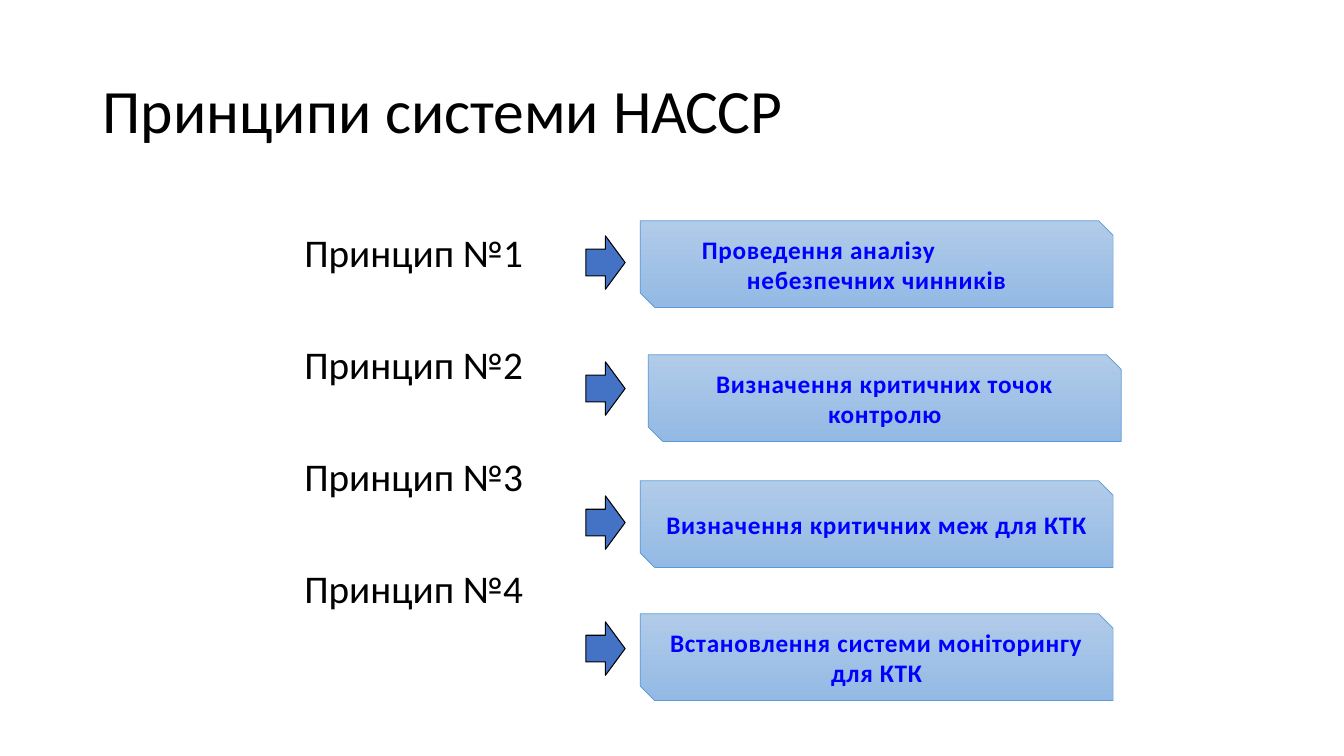
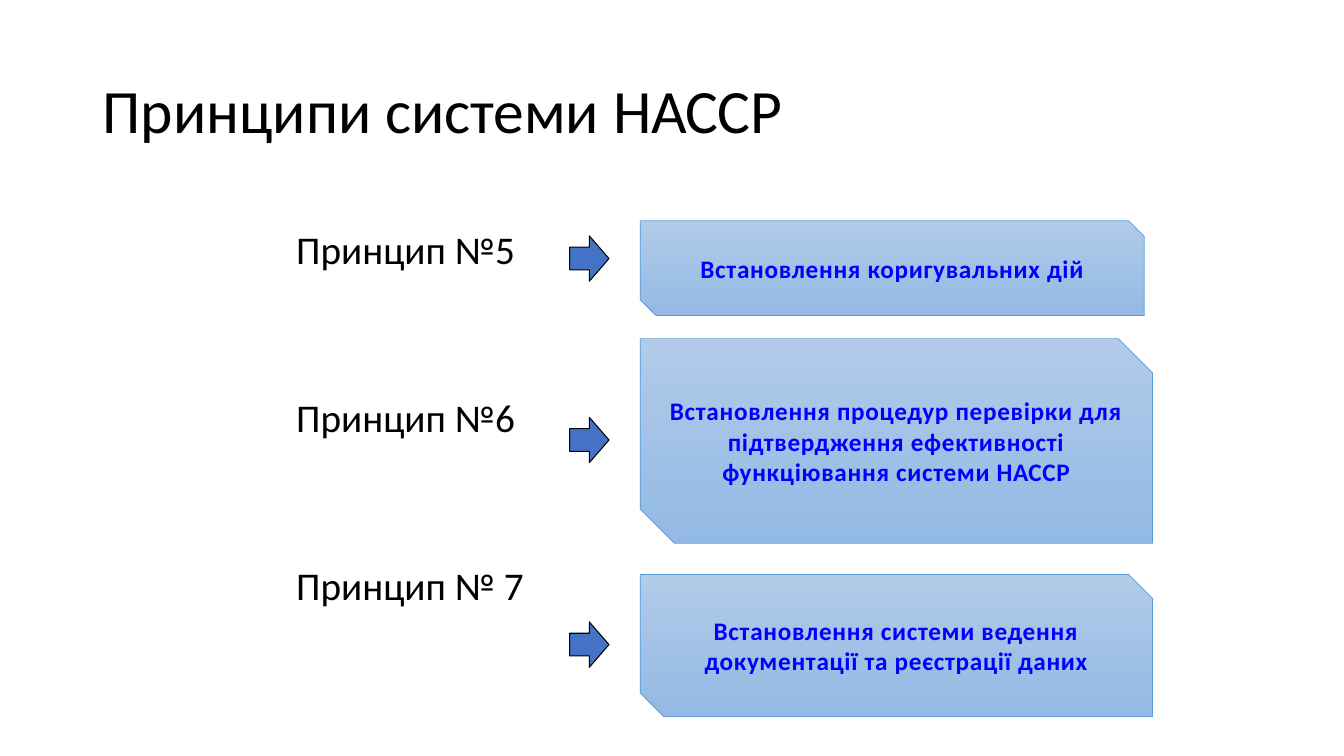
from pptx import Presentation
from pptx.dml.color import RGBColor
from pptx.enum.shapes import MSO_SHAPE
from pptx.enum.text import MSO_ANCHOR, PP_ALIGN
from pptx.util import Inches, Pt

COLOURS = {
    "text": "000000",
    "arrow": "4472C4",
    "arrow_line": "000000",
    "panel_top": "B1CBE9",
    "panel_bottom": "93B9E4",
    "panel_line": "5B9BD5",
    "panel_text": "0000FF",
}
TITLE = "Принципи системи НАССР"
TITLE_FONT = {"name": "Calibri", "size": Pt(44)}
LABEL_FONT = {"name": "Calibri", "size": Pt(28)}
PANEL_FONT = {"name": "Calibri", "size": Pt(18), "bold": True}
PANEL_LEFT = 6.35
ARROW_WIDTH = 0.39

# Each panel is left, top, width, height and its text lines;
# a line is its text and, if it is not centred, its left indent.
SLIDES = [
    {
        "labels": ["Принцип №1", "Принцип №2", "Принцип №3", "Принцип №4"],
        "label_box": (2.92, 2.27, 8.75, 4.5),
        "label_gap": 49.6,
        "arrow_left": 5.81,
        "arrow_height": 0.53,
        "arrow_tops": [2.34, 3.59, 4.92, 6.17],
        "panels": [
            ((PANEL_LEFT, 2.19, 4.69, 0.86),
             [("Проведення аналізу", 0.44), ("небезпечних чинників", None)]),
            ((6.43, 3.52, 4.69, 0.86),
             [("Визначення критичних точок контролю", None)]),
            ((PANEL_LEFT, 4.77, 4.69, 0.86),
             [("Визначення критичних меж для КТК", None)]),
            ((PANEL_LEFT, 6.09, 4.69, 0.86),
             [("Встановлення системи моніторингу для КТК", None)]),
        ],
    },
    {
        "labels": ["Принцип №5", "Принцип №6", "Принцип № 7"],
        "label_box": (2.84, 2.24, 8.66, 4.5),
        "label_gap": 89.8,
        "arrow_left": 5.65,
        "arrow_height": 0.45,
        "arrow_tops": [2.34, 4.14, 6.17],
        "panels": [
            ((PANEL_LEFT, 2.19, 5, 0.94),
             [("Встановлення коригувальних дій", None)]),
            ((PANEL_LEFT, 3.36, 5.08, 2.03),
             [("Встановлення процедур перевірки для підтвердження "
               "ефективності функціювання системи НАССР", None)]),
            ((PANEL_LEFT, 5.7, 5.08, 1.41),
             [("Встановлення системи ведення документації "
               "та реєстрації даних", None)]),
        ],
    },
]


def colour(name):
    return RGBColor.from_string(COLOURS[name])


def place(box):
    return [Inches(length) for length in box]


def write(para, text, font, colour_name):
    span = para.add_run()
    span.text = text
    for name, value in font.items():
        setattr(span.font, name, value)
    span.font.color.rgb = colour(colour_name)
    return span


def add_text(page, box, lines, font, anchor, gap=0):
    """Left-aligned paragraphs, with gap points between them."""
    frame = page.shapes.add_textbox(*place(box)).text_frame
    frame.word_wrap = True
    frame.vertical_anchor = anchor
    for index, line in enumerate(lines):
        para = frame.add_paragraph() if index else frame.paragraphs[0]
        para.line_spacing = 0.9
        para.space_before = Pt(gap if index else 0)
        write(para, line, font, "text")


def add_outlined_shape(page, kind, box, line_name, line_width):
    shape = page.shapes.add_shape(kind, *place(box))
    shape.shadow.inherit = False
    shape.line.color.rgb = colour(line_name)
    shape.line.width = Pt(line_width)
    return shape


def add_arrow(page, box):
    arrow = add_outlined_shape(page, MSO_SHAPE.RIGHT_ARROW, box, "arrow_line", 0.75)
    arrow.fill.solid()
    arrow.fill.fore_color.rgb = colour("arrow")


def add_panel(page, box, lines):
    panel = add_outlined_shape(
        page, MSO_SHAPE.SNIP_2_DIAG_RECTANGLE, box, "panel_line", 0.5)
    panel.fill.gradient()
    panel.fill.gradient_angle = 270
    for stop, name in zip(panel.fill.gradient_stops, ("panel_top", "panel_bottom")):
        stop.color.rgb = colour(name)

    frame = panel.text_frame
    frame.word_wrap = True
    frame.vertical_anchor = MSO_ANCHOR.MIDDLE
    for index, (text, indent) in enumerate(lines):
        para = frame.add_paragraph() if index else frame.paragraphs[0]
        para.alignment = PP_ALIGN.CENTER if indent is None else PP_ALIGN.LEFT
        if indent is not None:
            para._p.get_or_add_pPr().set("marL", str(Inches(indent)))
        span = write(para, text, PANEL_FONT, "panel_text")
        span._r.get_or_add_rPr().set("spc", "50")


def add_principles_slide(deck, content):
    page = deck.slides.add_slide(deck.slide_layouts[6])
    add_text(page, (0.92, 0.4, 11.5, 1.45), [TITLE], TITLE_FONT, MSO_ANCHOR.MIDDLE)
    add_text(page, content["label_box"], content["labels"], LABEL_FONT,
             MSO_ANCHOR.TOP, content["label_gap"])
    for top in content["arrow_tops"]:
        add_arrow(page, (content["arrow_left"], top,
                         ARROW_WIDTH, content["arrow_height"]))
    for box, lines in content["panels"]:
        add_panel(page, box, lines)


def main():
    deck = Presentation()
    deck.slide_width = Inches(13.33)
    deck.slide_height = Inches(7.5)
    for content in SLIDES:
        add_principles_slide(deck, content)
    deck.save("out.pptx")


if __name__ == "__main__":
    main()
